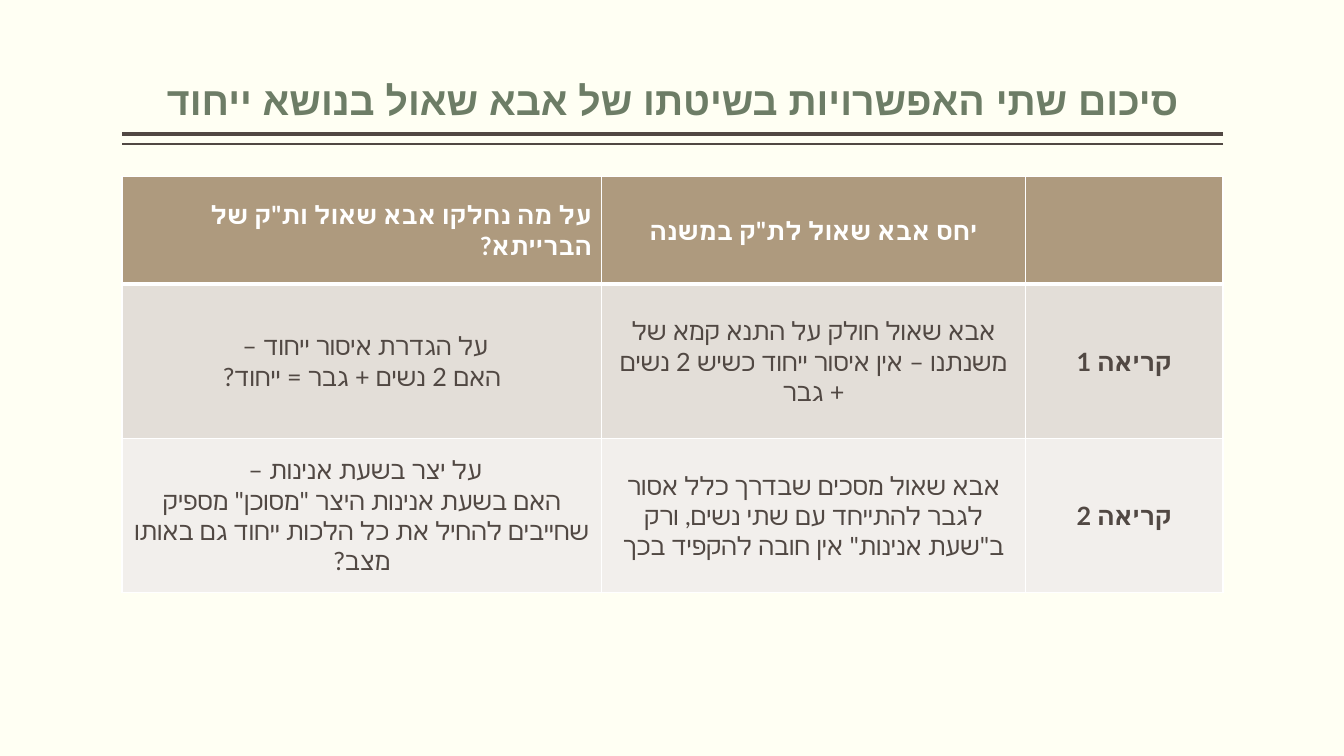
from lxml import etree
from pptx import Presentation
from pptx import util as u
from pptx.dml.color import RGBColor
from pptx.enum import shapes, text
from pptx.oxml.ns import qn

COLORS = {"paper": "FFFFF3", "ink": "514843", "title": "6D7D66", "white": "FFFFFF",
          "header": "AE9A7E", "first": "E3DED8", "second": "F2EFEC"}
LEFT, WIDTH = 1.21, 10.92
COLUMNS = [4.76, 4.2, 1.96]
ROWS = [1.07, 1.53, 1.53]
BANDS = ["header", "first", "second"]
READINGS = [
    [["על מה נחלקו אבא שאול ות\"ק של הברייתא?"],
     ["יחס אבא שאול לת\"ק במשנה"],
     []],
    [["על הגדרת איסור ייחוד – ", "האם 2 נשים + גבר = ייחוד?"],
     ["אבא שאול חולק על התנא קמא של משנתנו – אין איסור ייחוד כשיש 2 נשים + גבר"],
     ["קריאה 1"]],
    [["על יצר בשעת אנינות – ",
      "האם בשעת אנינות היצר \"מסוכן\" מספיק שחייבים להחיל את כל הלכות ייחוד גם באותו מצב?"],
     ["אבא שאול מסכים שבדרך כלל אסור לגבר להתייחד עם שתי נשים, ורק ב\"שעת אנינות\" אין חובה להקפיד בכך"],
     ["קריאה 2"]],
]


def rgb(name):
    return RGBColor.from_string(COLORS[name])


class SummarySlide:
    def __init__(self, deck):
        self.slide = deck.slides.add_slide(deck.slide_layouts[6])
        background = self.slide.background.fill
        background.solid()
        background.fore_color.rgb = rgb("paper")

    def add_words(self, paragraph, words, color, align, **font_values):
        paragraph.alignment = align
        run = paragraph.add_run()
        run.text = words
        for key, value in font_values.items():
            setattr(run.font, key, value)
        run.font.color.rgb = rgb(color)
        etree.SubElement(run.font._element, qn("a:cs"), typeface=font_values["name"])

    def title(self, words, top, height):
        box = self.slide.shapes.add_textbox(*map(u.Inches, (LEFT, top, WIDTH, height)))
        frame_values = {"word_wrap": True, "vertical_anchor": text.MSO_ANCHOR.BOTTOM,
                        "margin_left": 0, "margin_right": 0}
        for key, value in frame_values.items():
            setattr(box.text_frame, key, value)
        heading = box.text_frame.paragraphs[0]
        heading.line_spacing = 0.9
        self.add_words(heading, words, "title", text.PP_ALIGN.CENTER,
                       name="Arial", size=u.Pt(28), bold=True)

    def rule(self, y, weight):
        line = self.slide.shapes.add_connector(
            shapes.MSO_CONNECTOR.STRAIGHT,
            *map(u.Inches, (LEFT + WIDTH, y, LEFT, y)))
        line.line.color.rgb = rgb("ink")
        line.line.width = u.Pt(weight)
        etree.SubElement(line._element.spPr, qn("a:effectLst"))

    def border(self, cell, row):
        weights = {"lnL": 1, "lnR": 1, "lnT": 3 if row == 1 else 1, "lnB": 3 if row == 0 else 1}
        properties = cell._tc.get_or_add_tcPr()
        for side, weight in weights.items():
            edge = etree.SubElement(properties, qn("a:" + side), w=str(u.Pt(weight)))
            solid = etree.SubElement(edge, qn("a:solidFill"))
            etree.SubElement(solid, qn("a:srgbClr"), val=COLORS["white"])

    def cell(self, cell, row, column, lines):
        self.border(cell, row)
        cell.fill.solid()
        cell.fill.fore_color.rgb = rgb(BANDS[row])
        cell.vertical_anchor = text.MSO_ANCHOR.MIDDLE
        align = text.PP_ALIGN.RIGHT if row == column == 0 else text.PP_ALIGN.CENTER
        frame = cell.text_frame
        for index, words in enumerate(lines):
            paragraph = frame.add_paragraph() if index else frame.paragraphs[0]
            paragraph._p.get_or_add_pPr().set("rtl", "1")
            self.add_words(paragraph, words, "ink" if row else "white", align,
                           name="Lato", size=u.Pt(18), bold=row == 0 or column == 2)

    def table(self, top):
        grid = self.slide.shapes.add_table(
            len(ROWS), len(COLUMNS),
            *map(u.Inches, (LEFT, top, WIDTH, sum(ROWS)))).table
        for column, width in zip(grid.columns, COLUMNS):
            column.width = u.Inches(width)
        for row, height in zip(grid.rows, ROWS):
            row.height = u.Inches(height)
        for r, reading in enumerate(READINGS):
            for c, lines in enumerate(reading):
                self.cell(grid.cell(r, c), r, c, lines)


def main():
    deck = Presentation()
    deck.slide_width, deck.slide_height = u.Inches(13.33), u.Inches(7.5)
    summary = SummarySlide(deck)
    for y, weight in [(1.33, 3), (1.43, 1)]:
        summary.rule(y, weight)
    summary.title("סיכום שתי האפשרויות בשיטתו של אבא שאול בנושא ייחוד", 0.08, 1.2)
    summary.table(1.75)
    deck.save("out.pptx")


if __name__ == "__main__":
    main()
